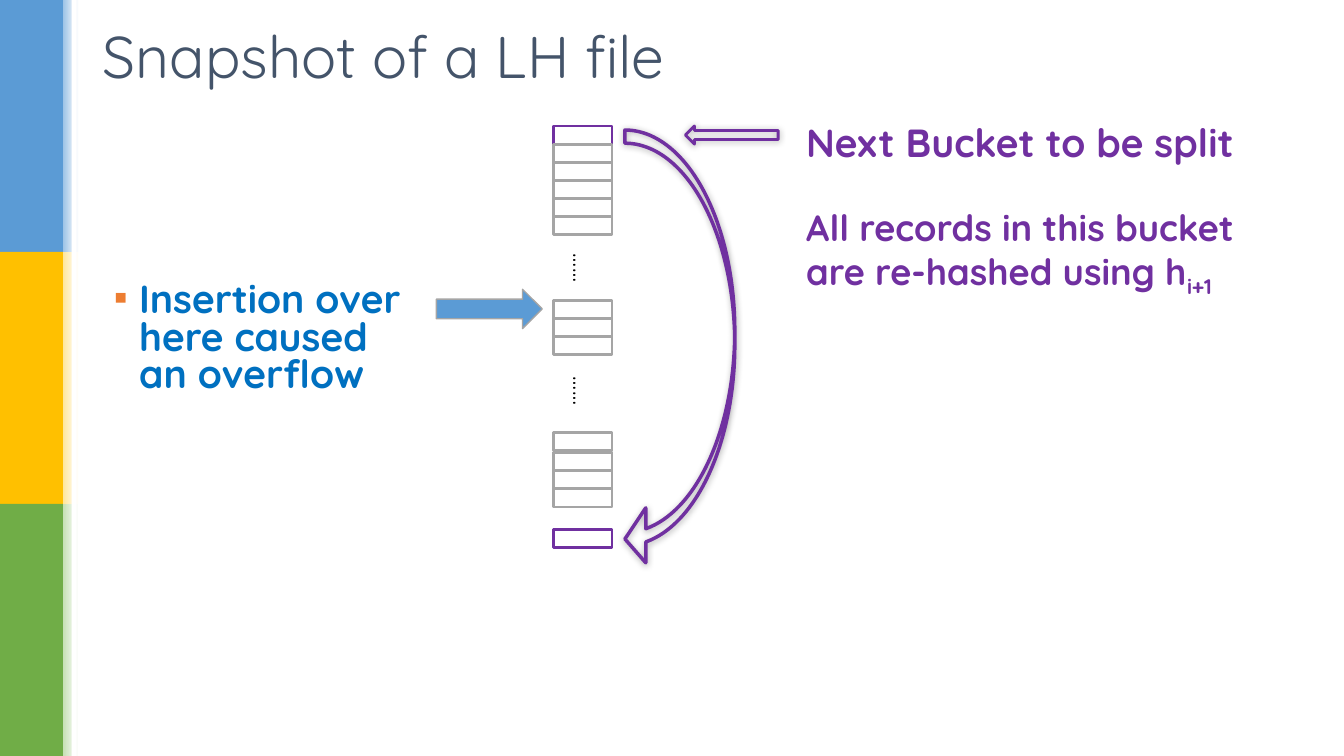
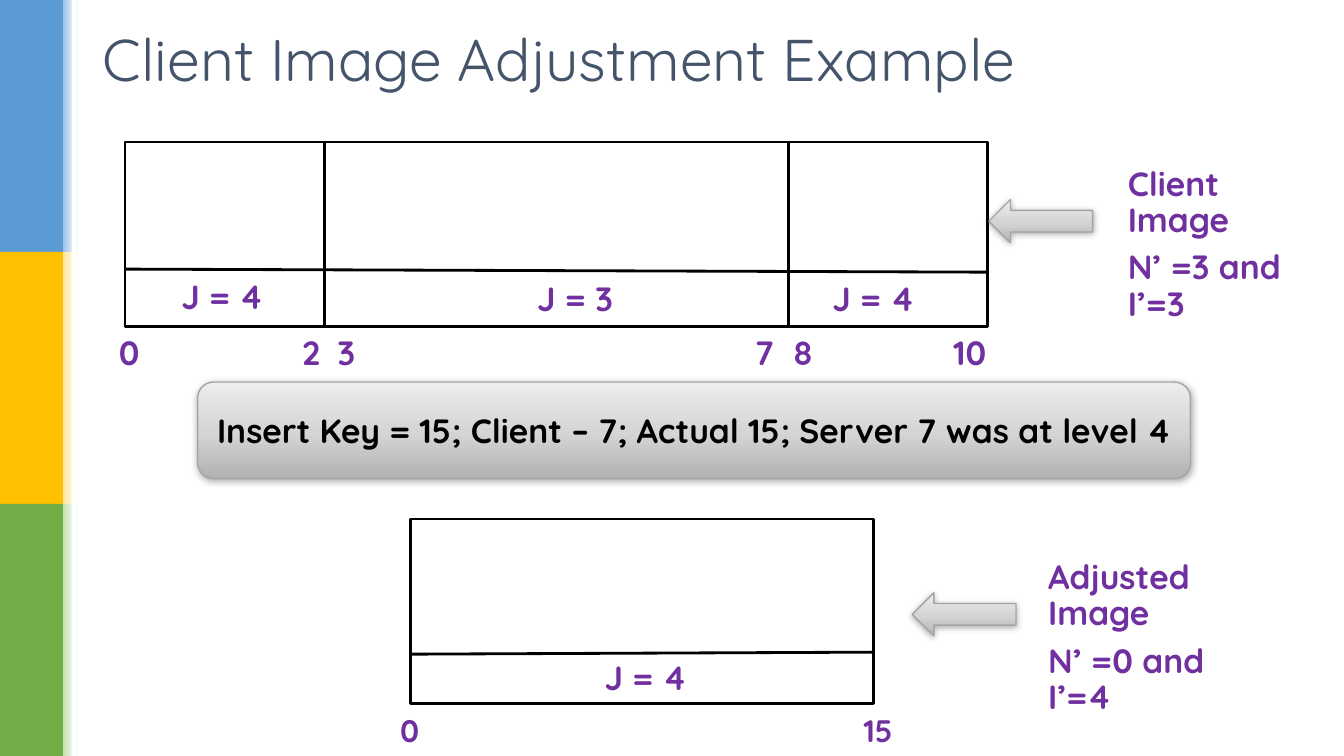
from dataclasses import dataclass

from lxml.etree import SubElement as Sub
from pptx import Presentation as Deck
from pptx.dml.color import RGBColor as RGB
from pptx.enum.shapes import MSO_CONNECTOR as Link, MSO_SHAPE as Kind
from pptx.enum.text import MSO_ANCHOR as Anchor, MSO_AUTO_SIZE as Fit, PP_ALIGN as Align
from pptx.oxml.ns import qn
from pptx.util import Inches, Pt

COLS, ROWS = 160, 90


@dataclass(frozen=True)
class Theme:
    font: str = "Quicksand"
    title: str = "44546A"
    key: str = "7030A0"
    note: str = "0070C0"
    mark: str = "ED7D31"
    ink: str = "000000"
    paper: str = "FFFFFF"
    gray: str = "A5A5A5"
    blue: str = "5B9BD5"
    bands: tuple = (("5B9BD5", "9DC3E6"), ("FFC000", "FFE699"), ("70AD47", "C5E0B4"))
    steel: tuple = ((0, "B1B1B1"), (48, "D5D5D5"), (100, "EDEDED"))
    head: float = 42
    large: float = 28
    mid: float = 26
    base: float = 24
    small: float = 22.2
    dots: float = 18


class Board:
    """Hold the theme and the current slide, and draw on a 160 by 90 grid."""

    def __init__(self, theme):
        self.look = theme
        self.deck = Deck()
        self.deck.slide_width, self.deck.slide_height = Inches(13.33), Inches(7.5)
        self.slide = None

    def place(self, *spots):
        wide, high = self.deck.slide_width / COLS, self.deck.slide_height / ROWS
        return [round(v * (high if i % 2 else wide)) for i, v in enumerate(spots)]

    def page(self, title, top, width, layout):
        look = self.look
        self.slide = self.deck.slides.add_slide(self.deck.slide_layouts[layout])
        step = ROWS / len(look.bands)
        for i, (full, pale) in enumerate(look.bands):
            self.shape(Kind.RECTANGLE, (0, i * step, 7.5, step), full)
            self.shape(Kind.RECTANGLE, (7.5, i * step, 1.9, step),
                       ((0, pale), (100, look.paper)), angle=0)
        self.shape(Kind.RECTANGLE, (8.52, 0, 0.6, ROWS), look.paper)
        self.hold(self.slide.shapes.title, (11.04, top, width, 10.32))
        self.letter(self.slide.shapes.title, [title], look.head, look.title, bold=False,
                    anchor=Anchor.MIDDLE)

    def hold(self, frame, spot):
        frame.left, frame.top, frame.width, frame.height = self.place(*spot)

    def shape(self, kind, spot, fill=None, line=None, weight=2, angle=90, shade=False):
        form = self.slide.shapes.add_shape(kind, *self.place(*spot))
        form.shadow.inherit = False
        if fill is None:
            form.fill.background()
        elif isinstance(fill, str):
            form.fill.solid()
            form.fill.fore_color.rgb = RGB.from_string(fill)
        else:
            self.blend(form, fill, angle)
        if line:
            form.line.color.rgb = RGB.from_string(line)
            form.line.width = Pt(weight)
        else:
            form.line.fill.background()
        if shade:
            self.shade(form)
        return form

    def blend(self, form, stops, angle):
        form.fill.gradient()
        form.fill.gradient_angle = angle
        group = form._element.spPr.find(qn("a:gradFill")).find(qn("a:gsLst"))
        for old in list(group):
            group.remove(old)
        for share, color in stops:
            stop = Sub(group, qn("a:gs"), pos=str(share * 1000))
            Sub(stop, qn("a:srgbClr"), val=color)

    def shade(self, form):
        group = form._element.spPr.find(qn("a:effectLst"))
        cast = Sub(group, qn("a:outerShdw"), blurRad=str(Pt(5)), dist=str(Pt(1)),
                   dir="5400000", algn="t", rotWithShape="0")
        tint = Sub(cast, qn("a:srgbClr"), val=self.look.ink)
        Sub(tint, qn("a:alpha"), val="32000")

    def rule(self, *ends):
        line = self.slide.shapes.add_connector(Link.STRAIGHT, *self.place(*ends))
        line.line.color.rgb = RGB.from_string(self.look.ink)
        line.line.width = Pt(2)
        Sub(line._element.spPr, qn("a:effectLst"))

    def text(self, spot, paras, size, color=None, turn=0, **style):
        box = self.slide.shapes.add_textbox(*self.place(*spot))
        box.rotation = turn
        self.letter(box, paras, size, color or self.look.key, **style)

    def points(self, spot, paras):
        body = self.slide.placeholders[1]
        self.hold(body, spot)
        self.letter(body, paras, self.look.large, self.look.note, pitch=0.8, bullet="▪")

    def letter(self, form, paras, size, color, bold=True, pitch=1.0, align=Align.LEFT,
               anchor=Anchor.TOP, wrap=True, bullet=None):
        frame = form.text_frame
        frame.word_wrap = wrap
        frame.auto_size = Fit.NONE
        frame.vertical_anchor = anchor
        for i, runs in enumerate(paras):
            para = frame.add_paragraph() if i else frame.paragraphs[0]
            para.alignment = align
            para.line_spacing = pitch
            para.space_before = Pt(8 if i else 0)
            if bullet:
                self.bullet(para, bullet)
            for n, words in enumerate([runs] if isinstance(runs, str) else runs):
                run = para.add_run()
                run.text = words
                font = run.font
                font.name, font.size, font.bold = self.look.font, Pt(size), bold
                font.color.rgb = RGB.from_string(color)
                if n:
                    run._r.get_or_add_rPr().set("baseline", "-25000")

    def bullet(self, para, sign):
        props = para._p.get_or_add_pPr()
        props.set("marL", str(Inches(0.25)))
        props.set("indent", str(-Inches(0.25)))
        Sub(Sub(props, qn("a:buClr")), qn("a:srgbClr"), val=self.look.mark)
        Sub(props, qn("a:buChar"), char=sign)

    def stack(self, top, count, color):
        for i in range(count):
            self.shape(Kind.RECTANGLE, (65.9, top + i * 2.16, 6.96, 2.16), line=color)

    def frame(self, left, top, width):
        self.shape(Kind.RECTANGLE, (left, top, width, 21.96), line=self.look.ink)

    def label(self, left, top, words):
        self.text((left, top, 15.72, 5.76), [words], self.look.base, pitch=0.9)

    def state(self, arrow, note, paras):
        self.shape(Kind.LEFT_ARROW, (*arrow, 12.36, 5.16), self.look.steel,
                   self.look.gray, 1, shade=True)
        self.text((*note, 24.24, 18), paras, self.look.base, pitch=0.9)


def split(board):
    look = board.look
    board.page("Snapshot of a LH file", 1.44, 138, 1)
    for top, count, color in ((15, 1, look.key), (17.16, 5, look.gray),
                              (35.76, 3, look.gray), (51.48, 1, look.gray),
                              (53.88, 3, look.gray), (63, 1, look.key)):
        board.stack(top, count, color)
    for top in (30, 44.64):
        board.text((63.48, top, 11.88, 3.84), ["……"], look.dots, look.ink, 90,
                   bold=False, align=Align.CENTER, anchor=Anchor.MIDDLE)
    board.shape(Kind.LEFT_ARROW, (81.6, 15, 11.04, 2.16), line=look.key, shade=True)
    curve = board.shape(Kind.CURVED_LEFT_ARROW, (74.4, 15.48, 13.08, 51.96),
                        line=look.key, weight=2.5, shade=True)
    for i, share in enumerate((0.12, 0.5, 0.19)):
        curve.adjustments[i] = share
    board.shape(Kind.RIGHT_ARROW, (51.96, 34.44, 12.6, 4.68), look.blue, look.gray, 1)
    board.points((12.36, 33.12, 37.2, 14.64), ["Insertion over here caused an overflow"])
    board.text((94.8, 13.44, 53.4, 6.84), ["Next Bucket to be split"], look.large,
               wrap=False)
    board.text((94.8, 24.48, 59.52, 12.36),
               [("All records in this bucket are re-hashed using h", "i+1")],
               look.mid, pitch=0.9)


def adjust(board):
    look = board.look
    board.page("Client Image Adjustment Example", 1.8, 145.32, 5)
    for left, width in ((14.88, 23.76), (38.64, 55.2), (93.84, 23.76)):
        board.frame(left, 16.92, width)
    board.frame(48.84, 61.8, 55.2)
    board.rule(14.88, 32.04, 117.72, 32.4)
    board.rule(48.84, 77.88, 104.16, 77.64)
    for left, top, words in ((20.4, 32.76, "J = 4"), (62.76, 33, "J = 3"),
                             (97.92, 33, "J = 4"), (70.8, 78.12, "J = 4")):
        board.label(left, top, words)
    for left, width, words in ((12.96, 3.84, "0"), (34.8, 3.84, "2"), (39, 3.84, "3"),
                               (88.68, 6, "7"), (93.24, 7.08, "8"),
                               (112.32, 7.08, "10")):
        board.text((left, 39.5, width, 5.76), [words], look.base, pitch=0.9)
    for left, width, words in ((46.44, 4.92, "0"), (101.64, 7.56, "15")):
        board.text((left, 85.32, width, 4.68), [words], look.small, pitch=0.7)
    board.state((117.72, 23.76), (133.08, 19.32), ["Client Image", "N’ =3 and I’=3"])
    board.state((108.6, 70.56), (123.6, 66.12), ["Adjusted Image", "N’ =0 and I’=4"])
    key = board.shape(Kind.ROUNDED_RECTANGLE, (23.52, 45.48, 118.2, 11.52), look.steel,
                      look.gray, 1, shade=True)
    board.letter(key, ["Insert Key = 15; Client – 7; Actual 15; Server 7 was at level 4"],
                 look.base, look.ink, align=Align.CENTER, anchor=Anchor.MIDDLE)


def main():
    board = Board(Theme())
    split(board)
    adjust(board)
    board.deck.save("out.pptx")


if __name__ == "__main__":
    main()
